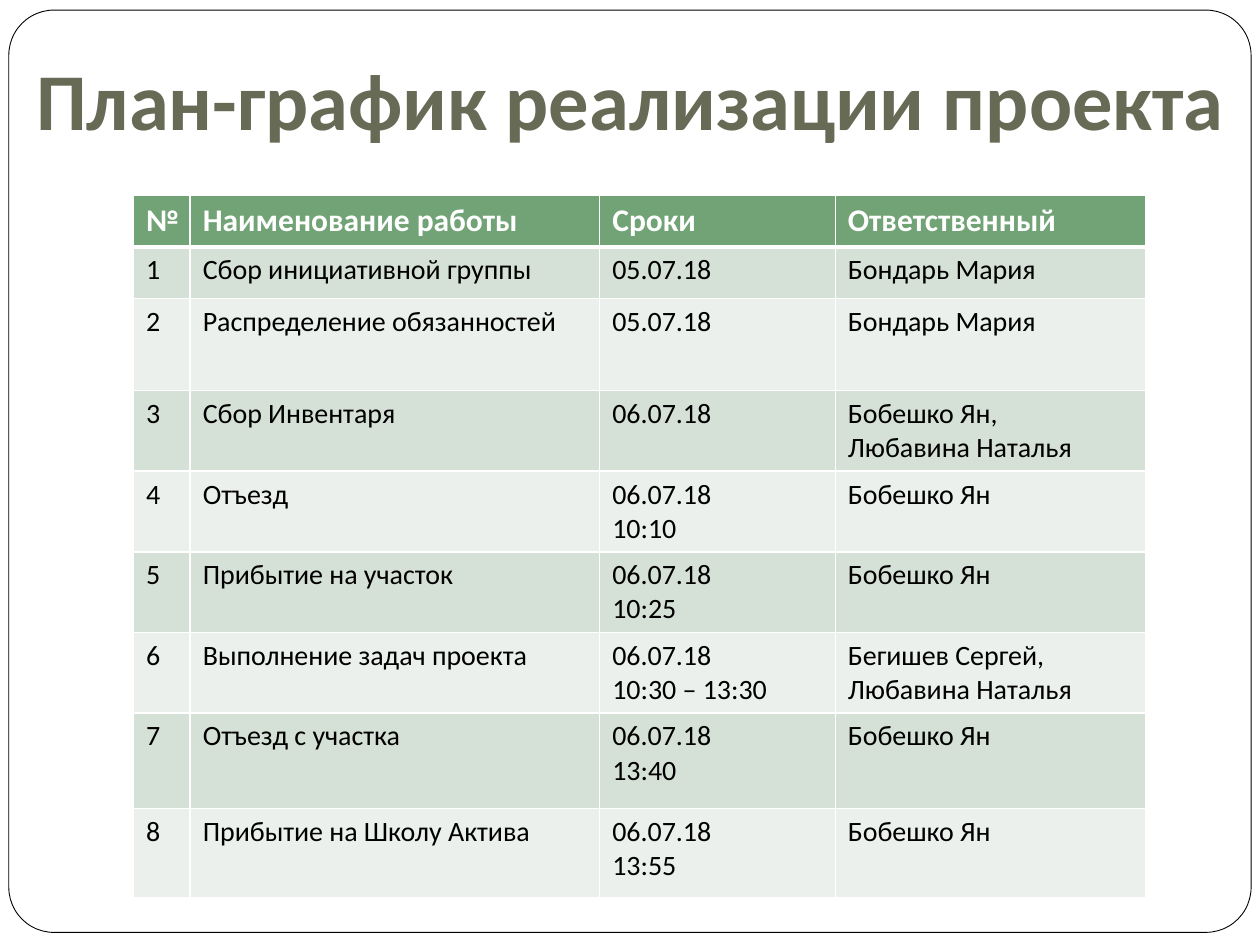
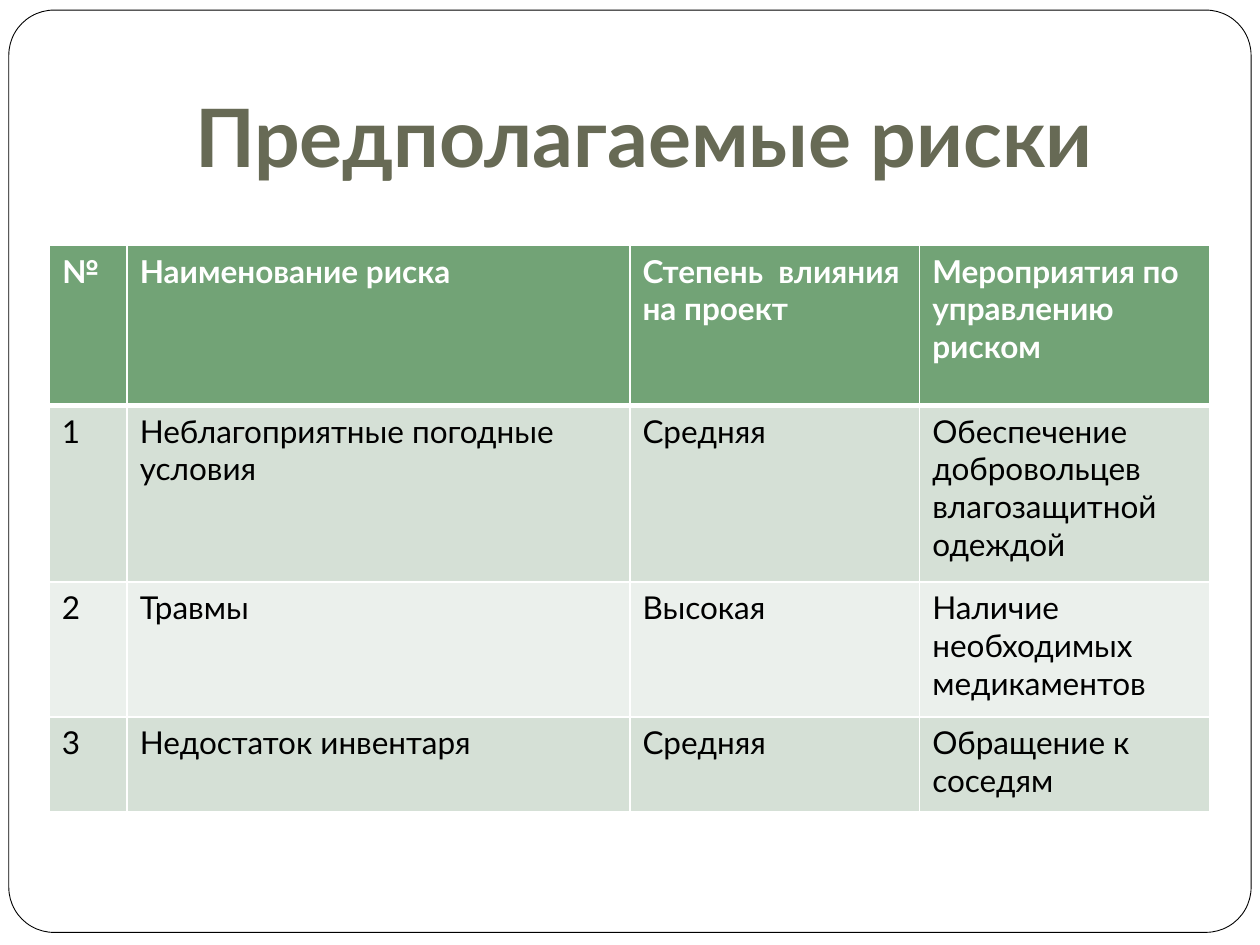
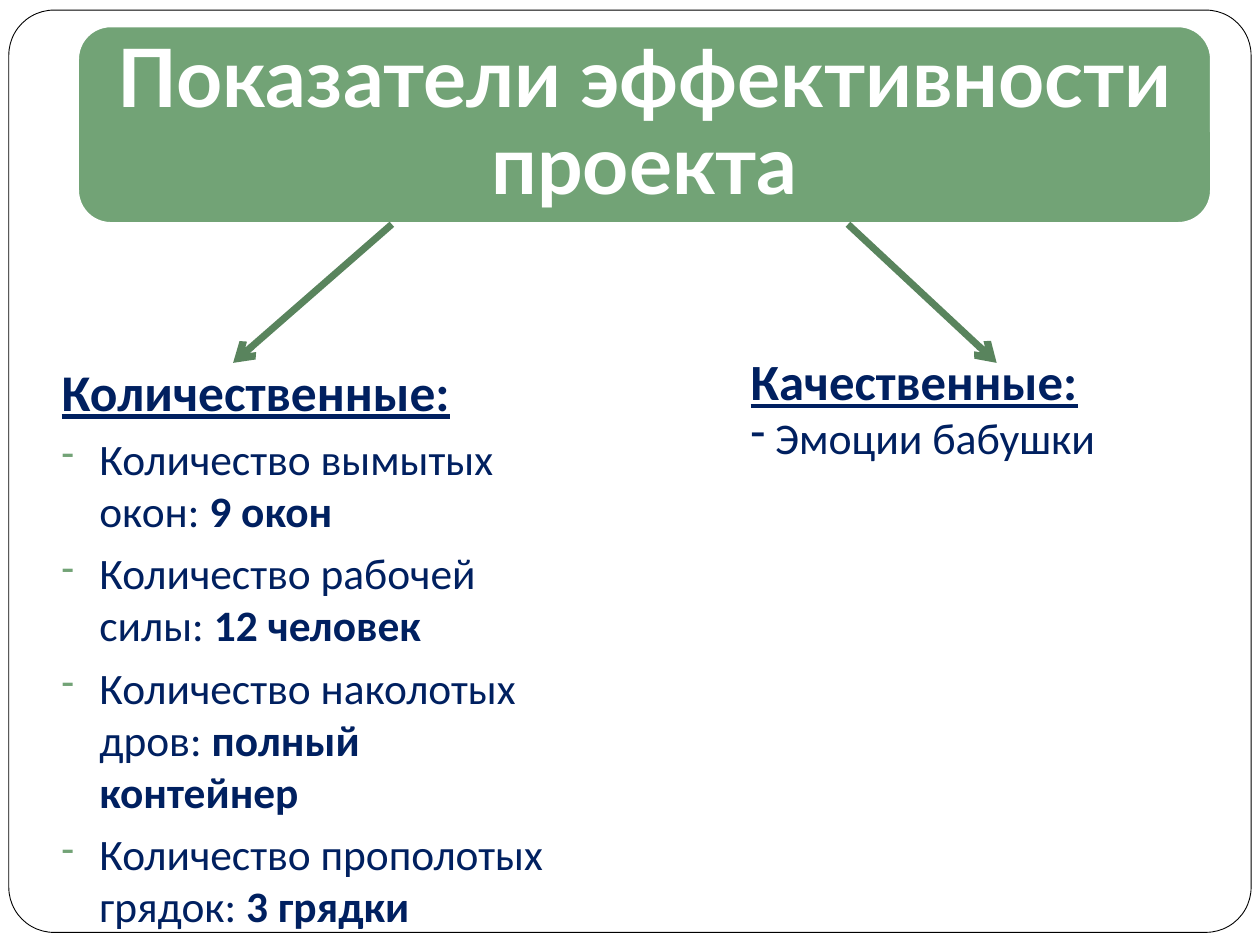
from dataclasses import dataclass
from typing import Any

from lxml import etree
from pptx import Presentation
from pptx.dml.color import RGBColor
from pptx.enum import shapes, text
from pptx.oxml import ns
from pptx.util import Inches, Pt

WHITE = RGBColor(0xFF, 0xFF, 0xFF)
BLACK = RGBColor(0, 0, 0)
OLIVE = RGBColor(0x67, 0x6A, 0x55)
GREEN = RGBColor(0x72, 0xA3, 0x76)
DARK_GREEN = RGBColor(0x59, 0x84, 0x5D)
BAND_DARK = RGBColor(0xD5, 0xE0, 0xD6)
BAND_LIGHT = RGBColor(0xEB, 0xF0, 0xEC)
NAVY = RGBColor(0x00, 0x20, 0x60)

CALIBRI = "Calibri"
LATO = "Lato"
TITLE_SIZE = 46

SCHEDULE = [
    ("№", "Наименование работы", "Сроки", "Ответственный"),
    ("1", "Сбор инициативной группы", "05.07.18", "Бондарь Мария"),
    ("2", "Распределение обязанностей", "05.07.18", "Бондарь Мария"),
    ("3", "Сбор Инвентаря", "06.07.18", "Бобешко Ян,\nЛюбавина Наталья"),
    ("4", "Отъезд", "06.07.18\n10:10", "Бобешко Ян"),
    ("5", "Прибытие на участок", "06.07.18\n10:25", "Бобешко Ян"),
    ("6", "Выполнение задач проекта", "06.07.18\n10:30 – 13:30",
     "Бегишев Сергей, Любавина Наталья"),
    ("7", "Отъезд с участка", "06.07.18\n13:40", "Бобешко Ян"),
    ("8", "Прибытие на Школу Актива", "06.07.18\n13:55", "Бобешко Ян"),
]

RISKS = [
    ("№", "Наименование риска", "Степень  влияния на проект",
     "Мероприятия по управлению риском"),
    ("1", "Неблагоприятные погодные условия", "Средняя",
     "Обеспечение добровольцев влагозащитной одеждой"),
    ("2", "Травмы", "Высокая", "Наличие необходимых медикаментов"),
    ("3", "Недостаток инвентаря", "Средняя", "Обращение к соседям"),
]

QUANTITIES = [
    ("Количество вымытых окон: ", "9 окон"),
    ("Количество рабочей силы: ", "12 человек"),
    ("Количество наколотых дров: ", "полный контейнер"),
    ("Количество прополотых грядок: ", "3 грядки"),
]


def child(parent, tag, **attributes):
    return etree.SubElement(parent, ns.qn(tag), attributes)


def inches(values):
    return [Inches(value) for value in values]


@dataclass
class Deck:
    prs: Any
    font: str = CALIBRI
    slide: Any = None

    def start(self, font):
        self.font = font
        self.slide = self.prs.slides.add_slide(self.prs.slide_layouts[6])
        frame = self.rounded((0.07, 0.08, 9.86, 7.32), WHITE, BLACK, 0.5)
        frame.adjustments[0] = 0.049

    def rounded(self, place, fill, line, width):
        shape = self.slide.shapes.add_shape(
            shapes.MSO_SHAPE.ROUNDED_RECTANGLE, *inches(place))
        shape.shadow.inherit = False
        shape.fill.solid()
        shape.fill.fore_color.rgb = fill
        shape.line.color.rgb = line
        shape.line.width = Pt(width)
        return shape

    def run(self, paragraph, wording, size, color, bold=False, underline=False):
        run = paragraph.add_run()
        run.text = wording
        font = run.font
        font.name = self.font
        font.size = Pt(size)
        font.color.rgb = color
        font.bold = bold
        font.underline = underline

    def box(self, place):
        frame = self.slide.shapes.add_textbox(*inches(place)).text_frame
        frame.word_wrap = True
        return frame

    def title(self, wording, place):
        frame = self.box(place)
        frame.vertical_anchor = text.MSO_ANCHOR.BOTTOM
        frame.margin_bottom = Inches(0.1)
        heading = frame.paragraphs[0]
        heading.alignment = text.PP_ALIGN.CENTER
        self.run(heading, wording, TITLE_SIZE, OLIVE, bold=True)

    def banner(self, wording, place):
        frame = self.rounded(place, GREEN, WHITE, 1).text_frame
        frame.word_wrap = True
        frame.vertical_anchor = text.MSO_ANCHOR.MIDDLE
        frame.margin_left = frame.margin_right = Inches(0.11)
        frame.margin_top = frame.margin_bottom = Inches(0.11)
        heading = frame.paragraphs[0]
        heading.alignment = text.PP_ALIGN.CENTER
        heading.line_spacing = 0.9
        self.run(heading, wording, TITLE_SIZE, WHITE, bold=True)

    def dash(self, paragraph, indent=0, color=None):
        props = paragraph._p.get_or_add_pPr()
        props.set("marL", str(Inches(indent)))
        props.set("indent", str(-Inches(indent)))
        if color is not None:
            child(child(props, "a:buClr"), "a:srgbClr", val=str(color))
            child(props, "a:buSzPct", val="85000")
        child(props, "a:buChar", char="-")

    def arrow(self, start, end):
        line = self.slide.shapes.add_connector(
            shapes.MSO_CONNECTOR.STRAIGHT, *inches(start + end))
        line.line.color.rgb = DARK_GREEN
        line.line.width = Pt(4)
        child(line.line._get_or_add_ln(), "a:tailEnd", type="arrow")
        child(line._element.spPr, "a:effectLst")

    def borders(self, cell, row):
        props = cell._tc.get_or_add_tcPr()
        widths = {"L": 1, "R": 1, "T": 3 if row == 1 else 1, "B": 3 if row == 0 else 1}
        for side, width in widths.items():
            edge = child(props, f"a:ln{side}", w=str(Pt(width)))
            child(child(edge, "a:solidFill"), "a:srgbClr", val=str(WHITE))

    def table(self, entries, corner, widths, heights, body_size):
        size = (sum(widths), sum(heights))
        grid = self.slide.shapes.add_table(
            len(heights), len(widths), *inches(corner + size)).table
        for column, width in zip(grid.columns, widths):
            column.width = Inches(width)
        for row, (height, entry) in enumerate(zip(heights, entries)):
            grid.rows[row].height = Inches(height)
            header = row == 0
            band = GREEN if header else BAND_DARK if row % 2 else BAND_LIGHT
            for cell, wording in zip(grid.rows[row].cells, entry):
                self.borders(cell, row)
                cell.fill.solid()
                cell.fill.fore_color.rgb = band
                frame = cell.text_frame
                for number, line in enumerate(wording.split("\n")):
                    paragraph = frame.add_paragraph() if number else frame.paragraphs[0]
                    self.run(paragraph, line, 18 if header else body_size,
                             WHITE if header else BLACK, bold=header)
        return grid


def schedule_slide(deck):
    deck.start(CALIBRI)
    deck.title("План-график реализации проекта", (0, 0.31, 10, 0.95))
    heights = [0.41, 0.41, 0.73] + [0.64] * 4 + [0.76, 0.71]
    schedule = deck.table(SCHEDULE, (1.06, 1.55), (0.45, 3.25, 1.87, 2.46), heights, 16)
    schedule.cell(0, 0).text_frame.paragraphs[0].alignment = text.PP_ALIGN.CENTER


def risks_slide(deck):
    deck.start(LATO)
    deck.title("Предполагаемые риски", (0.86, 0.31, 8.5, 1.25))
    deck.table(RISKS, (0.39, 1.95), (0.62, 3.99, 2.3, 2.3), (1.27, 1.4, 1.07, 0.75), 18)


def indicators_slide(deck):
    deck.start(LATO)
    deck.banner("Показатели эффективности проекта", (0.62, 0.21, 8.99, 1.56))
    deck.font = CALIBRI

    quantitative = deck.box((0.39, 2.81, 4.09, 4.33))
    deck.run(quantitative.paragraphs[0], "Количественные:", 29.4, NAVY, True, True)
    for measure, amount in QUANTITIES:
        item = quantitative.add_paragraph()
        deck.dash(item, 0.3, GREEN)
        item.space_before = Pt(5.8)
        deck.run(item, measure, 24.8, NAVY)
        deck.run(item, amount, 24.8, NAVY, bold=True)

    qualitative = deck.box((5.86, 2.73, 3.98, 2.88))
    deck.run(qualitative.paragraphs[0], "Качественные:", 29, NAVY, True, True)
    emotions = qualitative.add_paragraph()
    deck.dash(emotions)
    deck.run(emotions, " Эмоции бабушки", 25, NAVY)

    deck.arrow((3.11, 1.78), (1.85, 2.88))
    deck.arrow((6.73, 1.78), (7.91, 2.88))


def main():
    prs = Presentation()
    prs.slide_width = Inches(10)
    prs.slide_height = Inches(7.5)
    deck = Deck(prs)
    schedule_slide(deck)
    risks_slide(deck)
    indicators_slide(deck)
    prs.save("out.pptx")


if __name__ == "__main__":
    main()
